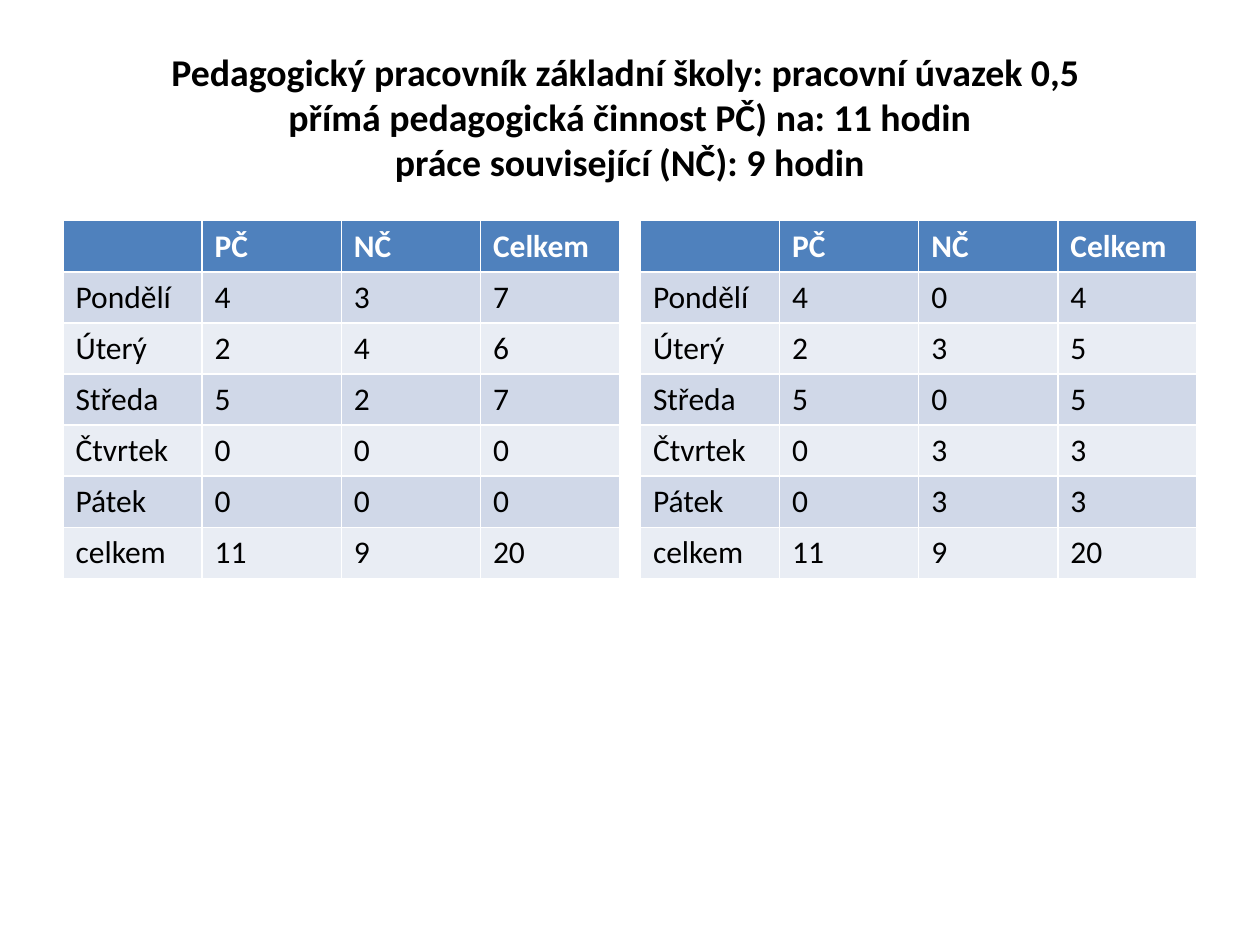
from pptx import Presentation
from pptx.dml.color import RGBColor
from pptx.enum.text import MSO_ANCHOR, PP_ALIGN
from pptx.util import Cm, Pt

BLACK = RGBColor(0x00, 0x00, 0x00)
WHITE = RGBColor(0xFF, 0xFF, 0xFF)
HEADER_BLUE = RGBColor(0x4F, 0x81, 0xBD)
BAND_DARK = RGBColor(0xD0, 0xD8, 0xE8)
BAND_LIGHT = RGBColor(0xE9, 0xED, 0xF4)

HEADINGS = ["", "PČ", "NČ", "Celkem"]
DAYS = ["Pondělí", "Úterý", "Středa", "Čtvrtek", "Pátek"]
DIRECT_HOURS = [4, 2, 5, 0, 0]
RELATED_HOURS_VARIANTS = [[3, 4, 2, 0, 0], [0, 3, 0, 3, 3]]

MARGIN = 1.27
SCHEDULE_TOP = 4.45
SCHEDULE_WIDTH = 11.22
SCHEDULE_STEP = 11.64
ROW_HEIGHT = 1.03


def write(frame, text, *, font="Calibri", size=18, color=BLACK, bold=False,
          align=PP_ALIGN.LEFT):
    paragraph = frame.paragraphs[0]
    paragraph.text = text
    paragraph.alignment = align
    for part in (paragraph, *paragraph.runs):
        part.font.name = font
        part.font.size = Pt(size)
        part.font.bold = bold
        part.font.color.rgb = color


def weekly_rows(related_hours):
    hours = list(zip(DIRECT_HOURS, related_hours))
    rows = [[day, direct, related, direct + related]
            for day, (direct, related) in zip(DAYS, hours)]
    direct_sum, related_sum = sum(DIRECT_HOURS), sum(related_hours)
    return rows + [["celkem", direct_sum, related_sum, direct_sum + related_sum]]


class TimetableSlide:
    header = {"color": WHITE, "bold": True}
    bands = (BAND_LIGHT, BAND_DARK)

    def __init__(self, presentation):
        self.slide = presentation.slides.add_slide(presentation.slide_layouts[6])

    def heading(self, lines, left, top, width, height):
        box = self.slide.shapes.add_textbox(Cm(left), Cm(top), Cm(width), Cm(height))
        frame = box.text_frame
        frame.word_wrap = True
        frame.vertical_anchor = MSO_ANCHOR.MIDDLE
        write(frame, "\v".join(lines), size=21.6, bold=True, align=PP_ALIGN.CENTER)

    def schedule(self, rows, left, top, width, row_height):
        schedule = self.slide.shapes.add_table(
            len(rows), len(rows[0]), Cm(left), Cm(top),
            Cm(width), Cm(row_height * len(rows))).table
        for row_index, row in enumerate(rows):
            is_header = row_index == 0
            for column_index, value in enumerate(row):
                cell = schedule.cell(row_index, column_index)
                cell.fill.solid()
                cell.fill.fore_color.rgb = (
                    HEADER_BLUE if is_header else self.bands[row_index % 2])
                write(cell.text_frame, str(value), **(self.header if is_header else {}))


def main():
    presentation = Presentation()
    presentation.slide_width = Cm(25.4)
    presentation.slide_height = Cm(19.05)
    timetable = TimetableSlide(presentation)
    timetable.heading(
        ["Pedagogický pracovník základní školy: pracovní úvazek 0,5 ",
         "přímá pedagogická činnost PČ) na: 11 hodin",
         "práce související (NČ): 9 hodin"],
        MARGIN, 0.76, 22.86, 3.18)
    for index, related_hours in enumerate(RELATED_HOURS_VARIANTS):
        timetable.schedule([HEADINGS] + weekly_rows(related_hours),
                           MARGIN + index * SCHEDULE_STEP, SCHEDULE_TOP,
                           SCHEDULE_WIDTH, ROW_HEIGHT)
    presentation.save("out.pptx")


if __name__ == "__main__":
    main()
